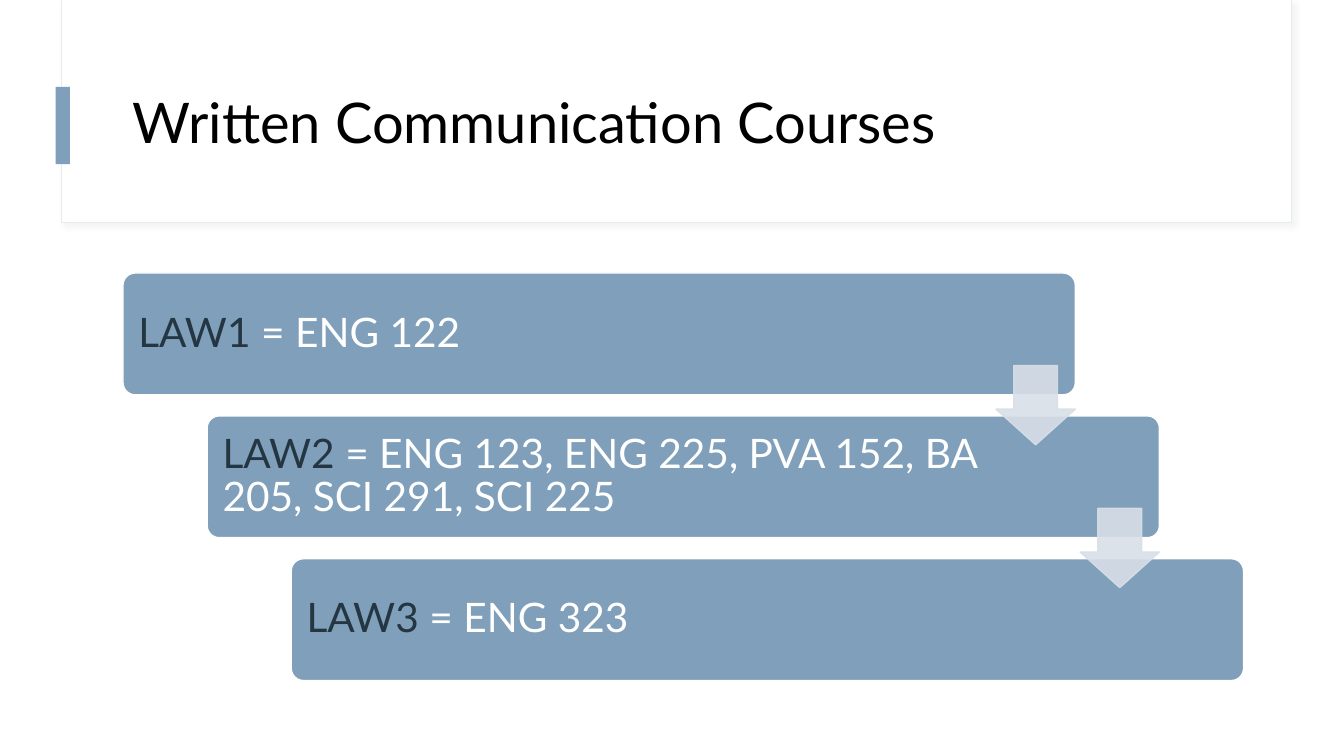
from dataclasses import dataclass

from lxml.etree import SubElement
from pptx import Presentation
from pptx.dml.color import RGBColor
from pptx.enum.shapes import MSO_SHAPE
from pptx.enum.text import MSO_ANCHOR, PP_ALIGN
from pptx.oxml import parse_xml
from pptx.oxml.ns import nsdecls, qn
from pptx.util import Cm, Pt


@dataclass(frozen=True)
class Theme:
    font: str = "Lato"
    title_size: Pt = Pt(40)
    course_size: Pt = Pt(29)
    white: RGBColor = RGBColor(0xFF, 0xFF, 0xFF)
    black: RGBColor = RGBColor(0x00, 0x00, 0x00)
    blue: RGBColor = RGBColor(0x7F, 0x9F, 0xBA)
    navy: RGBColor = RGBColor(0x24, 0x36, 0x41)
    pale_blue: RGBColor = RGBColor(0xD8, 0xDF, 0xE7)
    frame: RGBColor = RGBColor(0xE5, 0xEC, 0xF0)


theme = Theme()
prs = Presentation()
prs.slide_width, prs.slide_height = Cm(33.87), Cm(19.05)
slide = prs.slides.add_slide(prs.slide_layouts[6])


def add_block(preset, left, top, width, height, fill, line=None, line_width=1):
    block = slide.shapes.add_shape(preset, Cm(left), Cm(top), Cm(width), Cm(height))
    block.shadow.inherit = False
    block.fill.solid()
    block.fill.fore_color.rgb = fill
    if line is None:
        block.line.fill.background()
    else:
        block.line.color.rgb = line
        block.line.width = Pt(line_width)
    return block


def style_text(frame, size):
    frame.word_wrap = True
    frame.vertical_anchor = MSO_ANCHOR.MIDDLE
    paragraph = frame.paragraphs[0]
    paragraph.alignment = PP_ALIGN.LEFT
    paragraph.line_spacing = 0.9
    paragraph.font.name = theme.font
    paragraph.font.size = size
    return paragraph


header = add_block(MSO_SHAPE.RECTANGLE, 1.56, 0, 31, 5.61, theme.white, theme.frame, 0.75)
effects = header._element.spPr.find(qn("a:effectLst"))
effects.append(parse_xml(
    f'<a:outerShdw {nsdecls("a")} blurRad="50800" dist="38100" dir="2700000" algn="tl">'
    '<a:srgbClr val="D9D9D9"><a:alpha val="30000"/></a:srgbClr></a:outerShdw>'
))
add_block(MSO_SHAPE.RECTANGLE, 1.4, 2.19, 0.36, 1.95, theme.blue)

title = slide.shapes.add_textbox(Cm(3.1), Cm(1.52), Cm(28.24), Cm(3.28))
heading = style_text(title.text_frame, theme.title_size)
heading.text = "Written Communication Courses"
heading.font.color.rgb = theme.black

courses = [
    ("LAW1", "ENG 122"),
    ("LAW2", "ENG 123, ENG 225, PVA 152, BA 205, SCI 291, SCI 225"),
    ("LAW3", "ENG 323"),
]
step_x, step_y = 2.12, 3.6

for index, (level, classes) in enumerate(courses):
    stair = add_block(MSO_SHAPE.ROUNDED_RECTANGLE, 3.1 + index * step_x, 6.88 + index * step_y,
                      24, 3.07, theme.blue, theme.white)
    stair.adjustments[0] = 0.1
    frame = stair.text_frame
    frame.margin_left = frame.margin_top = frame.margin_bottom = Cm(0.3)
    frame.margin_right = Cm(4.4)
    paragraph = style_text(frame, theme.course_size)
    for words, color in ((level, theme.navy), (f" = {classes}", theme.white)):
        run = paragraph.add_run()
        run.text = words
        run.font.color.rgb = color

for index in range(len(courses) - 1):
    arrow = add_block(MSO_SHAPE.DOWN_ARROW, 25.1 + index * step_x, 9.21 + index * step_y,
                      2, 2, theme.pale_blue, theme.pale_blue)
    arrow.adjustments[0] = 0.55
    arrow.adjustments[1] = 0.45
    for color in arrow._element.spPr.iter(qn("a:srgbClr")):
        SubElement(color, qn("a:alpha"), val="90000")

prs.save("out.pptx")
